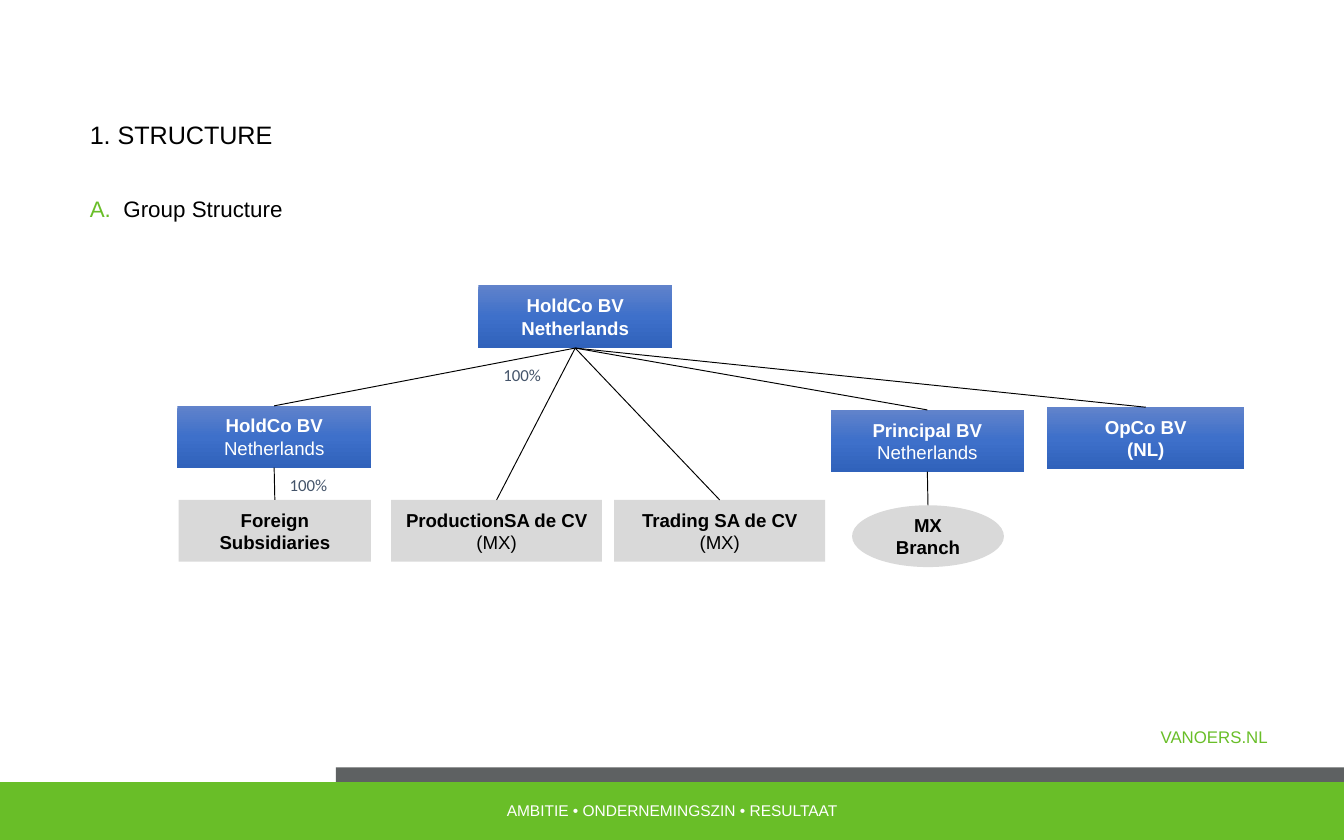
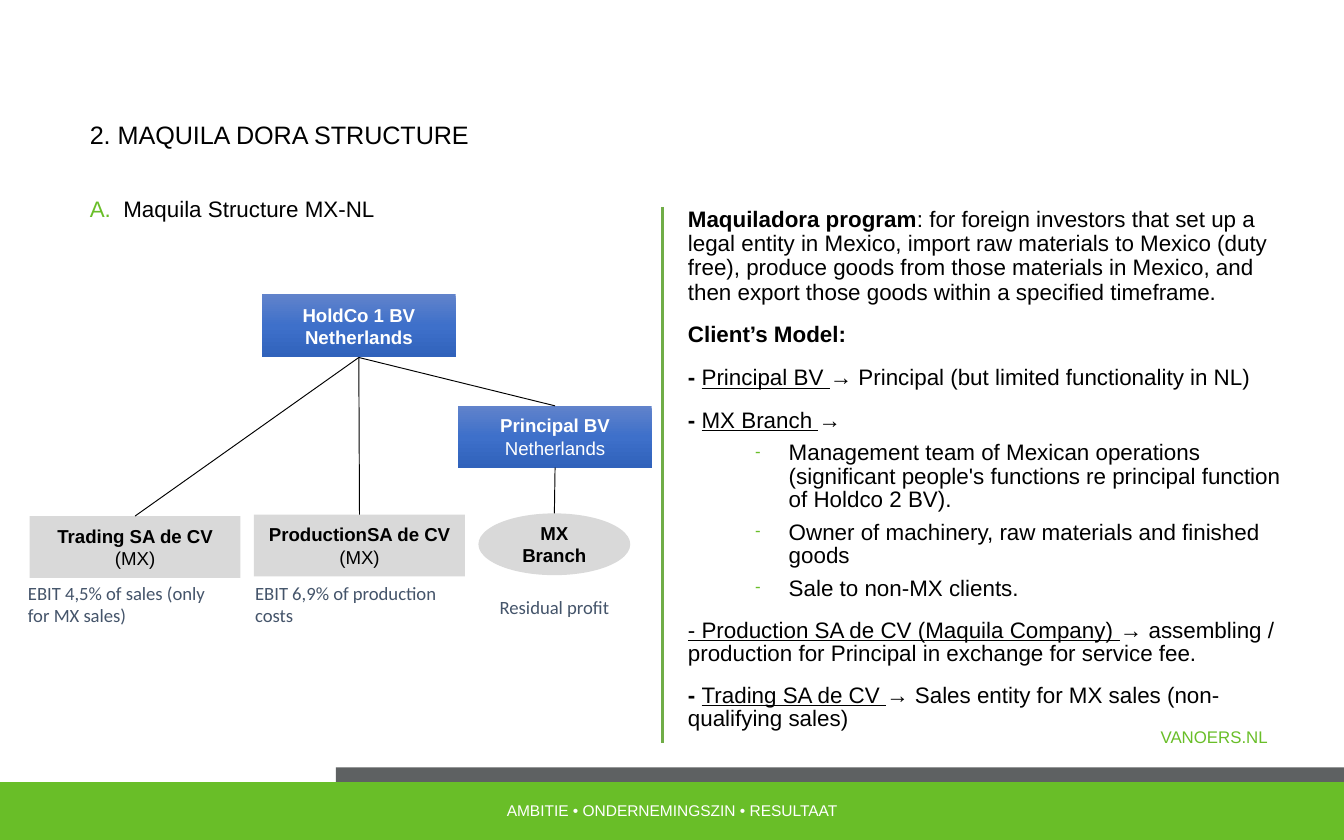
from copy import deepcopy

from lxml.etree import SubElement
from pptx import Presentation
from pptx.dml.color import RGBColor
from pptx.enum.shapes import MSO_CONNECTOR, MSO_SHAPE
from pptx.enum.text import MSO_ANCHOR, PP_ALIGN
from pptx.oxml.ns import qn
from pptx.util import Inches, Pt

# Shared look
GREEN, GREY, LIGHT, RULE = "69BE28", "5E6162", "D9D9D9", "70AD47"
BLACK, WHITE, SLATE = "000000", "FFFFFF", "44546A"
BLUES = [(0, "6183CB"), (0.5, "3E70CA"), (1, "3062BB")]
ALIGN = {"left": PP_ALIGN.LEFT, "center": PP_ALIGN.CENTER,
         "right": PP_ALIGN.RIGHT, "justify": PP_ALIGN.JUSTIFY}
SIZES = {"company": (1.44, 0.46), "top": (1.44, 0.47), "opco": (1.47, 0.46),
         "local": (1.57, 0.46), "foreign": (1.43, 0.46), "branch": (1.13, 0.46)}
BRANCH_BOTTOM_SITE, TOP_SITE, BOTTOM_SITE = 4, 0, 2

# Node labels: paragraphs of (text, style) runs, "b" bold, "u" underlined
PRINCIPAL = [[("Principal BV", "b"), (" Netherlands", "")]]
TRADING = [[("Trading SA de CV", "b")], [("(MX)", "")]]
PRODUCTION = [[("ProductionSA de CV", "b")], [("(MX)", "")]]
BRANCH = [[("MX Branch", "b")]]

# Charts: key -> (kind, left, top, label); links run from parent to child
SLIDES = [
    {
        "title": "1. STRUCTURE",
        "subtitle": "Group Structure",
        "nodes": {
            "top": ("top", 3.56, 2.12, [[("HoldCo BV", "b")], [("Netherlands", "b")]]),
            "holding": ("company", 1.32, 3.02, [[("HoldCo BV", "b"), (" Netherlands", "")]]),
            "principal": ("company", 6.18, 3.05, PRINCIPAL),
            "opco": ("opco", 7.79, 3.03, [[("OpCo BV", "b")], [("(NL)", "b")]]),
            "foreign": ("foreign", 1.33, 3.72, [[("Foreign Subsidiaries", "b")]]),
            "production": ("local", 2.91, 3.72, PRODUCTION),
            "trading": ("local", 4.57, 3.72, TRADING),
            "branch": ("branch", 6.34, 3.76, BRANCH),
        },
        "links": [("top", "holding"), ("top", "production"), ("top", "trading"),
                  ("top", "principal"), ("top", "opco"),
                  ("holding", "foreign"), ("principal", "branch")],
        "notes": [("100%", 3.61, 2.67, 0.55, 0.24, 9, "center"),
                  ("100%", 2.02, 3.49, 0.55, 0.24, 9, "center")],
    },
    {
        "title": "2. MAQUILA DORA STRUCTURE",
        "subtitle": "Maquila Structure MX-NL",
        "nodes": {
            "top": ("top", 1.95, 2.19, [[("HoldCo 1 BV", "b")], [("Netherlands", "b")]]),
            "principal": ("company", 3.41, 3.02, PRINCIPAL),
            "trading": ("local", 0.22, 3.84, TRADING),
            "production": ("local", 1.89, 3.83, PRODUCTION),
            "branch": ("branch", 3.56, 3.82, BRANCH),
        },
        "links": [("top", "trading"), ("top", "production"), ("top", "principal"),
                  ("principal", "branch")],
        "notes": [
            ("EBIT 4,5% of sales (only for MX sales)", 0.11, 4.33, 1.65, 0.33, 10, "left"),
            ("EBIT 6,9% of production costs", 1.8, 4.33, 1.65, 0.33, 10, "left"),
            ("Residual profit", 3.46, 4.35, 1.33, 0.33, 10, "center"),
        ],
    },
]

# Explanation beside the second chart: (kind, runs)
EXPLANATION = [
    ("loose", [("Maquiladora program", "b"),
               (": for foreign investors that set up a legal entity in Mexico, "
                "import raw materials to Mexico (duty free), produce goods from "
                "those materials in Mexico, and then export those goods within "
                "a specified timeframe.", "")]),
    ("loose", [("Client’s Model:", "b")]),
    ("loose", [("- ", "b"), ("Principal BV ", "u"), ("→", "b"),
               (" Principal (but limited functionality in NL)", "")]),
    ("tight", [("- ", "b"), ("MX Branch ", "u"), ("→", "b")]),
    ("dash", [("Management team of Mexican operations (significant people's "
               "functions re principal function of Holdco 2 BV).", "")]),
    ("dash", [("Owner of machinery, raw materials and finished goods", "")]),
    ("dash", [("Sale to non-MX clients.", "")]),
    ("tight", [("- Production SA de CV (Maquila Company) ", "u"), ("→ ", "b"),
               ("assembling / production for Principal in exchange for "
                "service fee.", "")]),
    ("tight", [("- ", "b"), ("Trading SA de CV ", "u"), ("→ ", "b"),
               ("Sales entity for MX sales (non-qualifying sales)", "")]),
]


def color(value):
    return RGBColor.from_string(value)


def add_bullet(para, tag, left, size=100, **attributes):
    """Give a paragraph a green bullet with a quarter-inch hanging indent."""
    properties = para._p.get_or_add_pPr()
    properties.set("marL", str(Inches(left)))
    properties.set("indent", str(Inches(-0.25)))
    tint = SubElement(properties, qn("a:buClr"))
    SubElement(tint, qn("a:srgbClr"), val=GREEN)
    SubElement(properties, qn("a:buSzPct"), val=str(size * 1000))
    SubElement(properties, qn("a:buFont"), typeface="Arial")
    SubElement(properties, qn(tag), **attributes)


def write(para, runs, size=12, tint=BLACK, font="Arial", align="left"):
    """Fill a paragraph with text or with (text, style) runs."""
    para.alignment = ALIGN[align]
    for text, style in [(runs, "")] if isinstance(runs, str) else runs:
        span = para.add_run()
        span.text = text
        span.font.size, span.font.name = Pt(size), font
        span.font.bold, span.font.underline = "b" in style, "u" in style
        span.font.color.rgb = color(tint)


def add_text(page, text, place, middle=False, **format):
    box = page.shapes.add_textbox(*map(Inches, place))
    frame = box.text_frame
    frame.word_wrap = True
    frame.vertical_anchor = MSO_ANCHOR.MIDDLE if middle else MSO_ANCHOR.TOP
    write(frame.paragraphs[0], text, **format)
    return frame


def add_block(page, kind, place, fill=None):
    """Add a borderless shape; without a fill it gets the blue gradient."""
    block = page.shapes.add_shape(kind, *map(Inches, place))
    block.shadow.inherit = False
    block.line.fill.background()
    if fill:
        block.fill.solid()
        block.fill.fore_color.rgb = color(fill)
        return block
    block.fill.gradient()
    block.fill.gradient_angle = 270
    stops = block._element.spPr.find(".//" + qn("a:gsLst"))
    stops.insert(1, deepcopy(stops[0]))
    for stop, (position, tint) in zip(block.fill.gradient_stops, BLUES):
        stop.position = position
        stop.color.rgb = color(tint)
    return block


def add_line(page, start=(0, 0), end=(0, 0), tint=BLACK, width=0.5):
    line = page.shapes.add_connector(MSO_CONNECTOR.STRAIGHT,
                                     *map(Inches, start + end))
    line.line.color.rgb = color(tint)
    line.line.width = Pt(width)
    SubElement(line._element.spPr, qn("a:effectLst"))
    return line


def add_node(page, kind, left, top, label):
    local = kind in ("local", "foreign", "branch")
    outline = MSO_SHAPE.OVAL if kind == "branch" else MSO_SHAPE.RECTANGLE
    node = add_block(page, outline, (left, top, *SIZES[kind]), LIGHT if local else None)
    frame = node.text_frame
    frame.word_wrap = True
    frame.vertical_anchor = MSO_ANCHOR.MIDDLE
    for index, runs in enumerate(label):
        para = frame.add_paragraph() if index else frame.paragraphs[0]
        write(para, runs, size=10, tint=BLACK if local else WHITE, align="center")
    return node


def add_page(deck, content):
    page = deck.slides.add_slide(deck.slide_layouts[6])
    # Bands and footer
    add_block(page, MSO_SHAPE.RECTANGLE, (2.5, 5.71, 7.5, 0.52), GREY)
    add_text(page, "VANOERS.NL", (7.4, 5.36, 2.13, 0.25),
             size=9, tint=GREEN, align="right")
    add_block(page, MSO_SHAPE.RECTANGLE, (0, 5.82, 10, 0.43), GREEN)
    add_text(page, "AMBITIE • ONDERNEMINGSZIN • RESULTAAT", (0, 5.91, 10, 0.24),
             size=8.3, tint=WHITE, align="center")
    # Headings
    add_text(page, content["title"], (0.57, 0.84, 8.84, 0.59), size=13.5)
    heading = add_text(page, content["subtitle"], (0.57, 1.43, 8.84, 0.4),
                       align="justify").paragraphs[0]
    add_bullet(heading, "a:buAutoNum", 0.25, type="alphaUcPeriod")
    heading.line_spacing = Pt(12.5)
    # Organisation chart
    nodes = {key: add_node(page, *node) for key, node in content["nodes"].items()}
    for parent, child in content["links"]:
        link = add_line(page)
        link.begin_connect(nodes[parent], BOTTOM_SITE)
        link.end_connect(nodes[child], TOP_SITE)
    for text, *place, size, align in content["notes"]:
        add_text(page, text, place, middle=True, size=size, tint=SLATE,
                 font="Calibri", align=align)
    return page


def add_explanation(page):
    add_line(page, (4.93, 1.54), (4.93, 5.53), tint=RULE, width=1.5)
    frame = add_text(page, EXPLANATION[0][1], (5.02, 1.5, 4.71, 4.1))
    frame.paragraphs[0].line_spacing = 0.9
    for kind, runs in EXPLANATION[1:]:
        para = frame.add_paragraph()
        if kind == "dash":
            para.level = 1
            add_bullet(para, "a:buChar", 0.75, size=75, char="-")
        write(para, runs)
        para.line_spacing = 0.9 if kind == "loose" else Pt(12.5)
        para.space_before = Pt(5 if kind == "dash" else 10)


def main():
    deck = Presentation()
    deck.slide_width, deck.slide_height = Inches(10), Inches(6.25)
    pages = [add_page(deck, content) for content in SLIDES]
    add_explanation(pages[1])
    deck.save("out.pptx")


if __name__ == "__main__":
    main()
